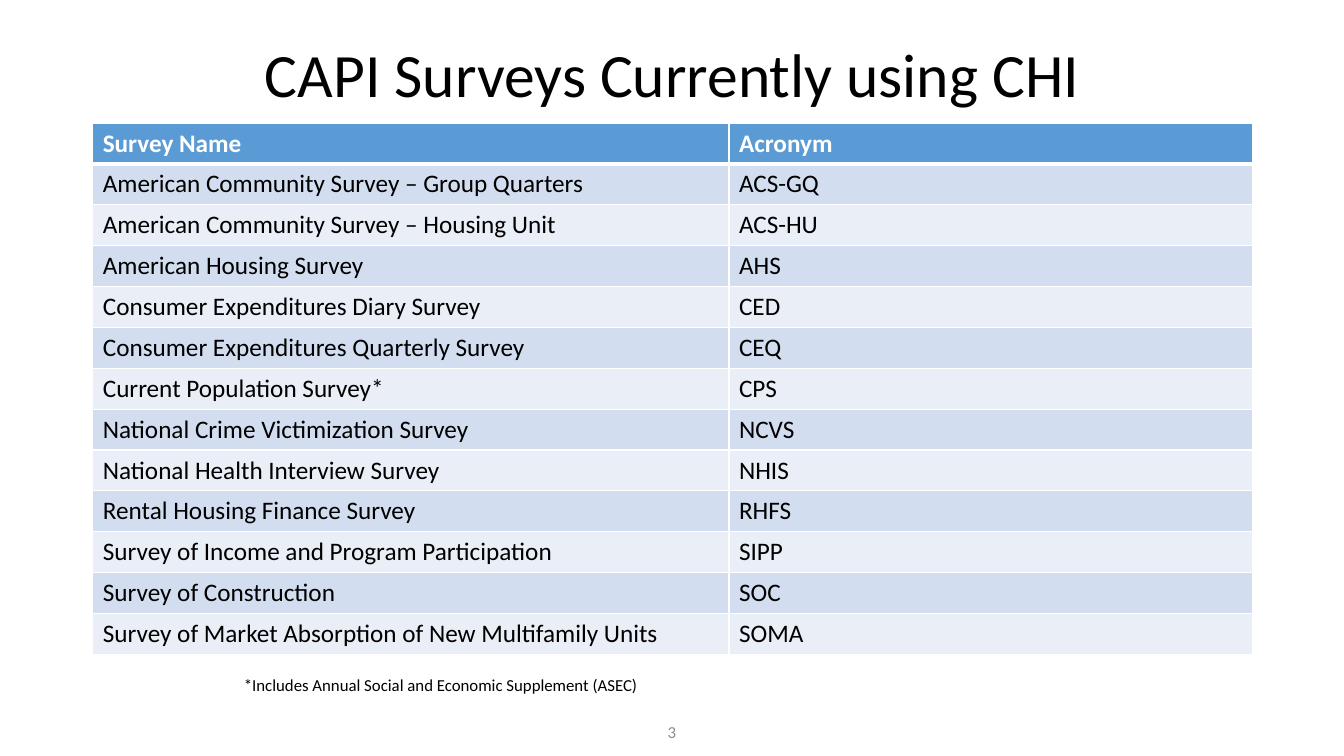
from lxml.etree import SubElement as Sub
from pptx import Presentation
from pptx.dml.color import RGBColor as RGB
from pptx.enum.text import MSO_ANCHOR as Anchor, MSO_AUTO_SIZE as Fit, PP_ALIGN as Align
from pptx.oxml.ns import qn
from pptx.util import Inches, Pt

COLORS = {"head": "5B9BD5", "odd": "D2DEEF", "even": "EAEFF7",
          "white": "FFFFFF", "black": "000000", "gray": "8C8C8C"}
FONT = "Calibri"
WIDE, HIGH = 13.33, 7.5
LEFT, SPAN = 0.92, 11.5
ROW = 0.4055
COLS = (6.31, 5.19)

SURVEYS = [
    ("Survey Name", "Acronym"),
    ("American Community Survey – Group Quarters", "ACS-GQ"),
    ("American Community Survey – Housing Unit", "ACS-HU"),
    ("American Housing Survey", "AHS"),
    ("Consumer Expenditures Diary Survey", "CED"),
    ("Consumer Expenditures Quarterly Survey", "CEQ"),
    ("Current Population Survey*", "CPS"),
    ("National Crime Victimization Survey", "NCVS"),
    ("National Health Interview Survey", "NHIS"),
    ("Rental Housing Finance Survey", "RHFS"),
    ("Survey of Income and Program Participation", "SIPP"),
    ("Survey of Construction", "SOC"),
    ("Survey of Market Absorption of New Multifamily Units", "SOMA"),
]


def style(par, size, color, bold=False, align=Align.LEFT):
    par.alignment = align
    font = par.font
    font.name, font.size, font.bold = FONT, Pt(size), bold
    font.color.rgb = RGB.from_string(COLORS[color])


def add_title(slide, box, text):
    title = slide.shapes.title
    title.left, title.top, title.width, title.height = map(Inches, box)
    frame = title.text_frame
    frame.text = text
    frame.vertical_anchor = Anchor.MIDDLE
    par = frame.paragraphs[0]
    style(par, 44, "black", align=Align.CENTER)
    par.line_spacing = 0.9


def add_edges(cell, top, bottom):
    """Draw white borders; must run before the cell is filled."""
    props = cell._tc.get_or_add_tcPr()
    for side, width in (("L", 1), ("R", 1), ("T", top), ("B", bottom)):
        line = Sub(props, qn(f"a:ln{side}"), w=str(Pt(width)))
        fill = Sub(line, qn("a:solidFill"))
        Sub(fill, qn("a:srgbClr"), val=COLORS["white"])


def add_grid(slide, box, rows):
    grid = slide.shapes.add_table(len(rows), len(COLS), *map(Inches, box)).table
    for col, width in zip(grid.columns, COLS):
        col.width = Inches(width)
    for r, row in enumerate(rows):
        grid.rows[r].height = Inches(ROW)
        head = r == 0
        shade = "head" if head else "odd" if r % 2 else "even"
        for c, text in enumerate(row):
            cell = grid.cell(r, c)
            cell.text = text
            add_edges(cell, 3 if r == 1 else 1, 3 if head else 1)
            cell.fill.solid()
            cell.fill.fore_color.rgb = RGB.from_string(COLORS[shade])
            style(cell.text_frame.paragraphs[0], 18,
                  "white" if head else "black", head)


def add_label(slide, box, text, color, align=Align.LEFT, anchor=Anchor.TOP):
    frame = slide.shapes.add_textbox(*map(Inches, box)).text_frame
    frame.word_wrap = True
    frame.auto_size = Fit.NONE
    frame.vertical_anchor = anchor
    frame.text = text
    style(frame.paragraphs[0], 12, color, align=align)


def main():
    deck = Presentation()
    deck.slide_width, deck.slide_height = Inches(WIDE), Inches(HIGH)
    slide = deck.slides.add_slide(deck.slide_layouts[5])
    add_title(slide, (LEFT, 0.04, SPAN, 1.45), "CAPI Surveys Currently using CHI")
    add_grid(slide, (LEFT, 1.22, SPAN, ROW * len(SURVEYS)), SURVEYS)
    add_label(slide, ((WIDE - 3) / 2, 7.06, 3, 0.4), "3", "gray",
              Align.CENTER, Anchor.MIDDLE)
    add_label(slide, (2.32, 6.64, 4.35, 0.3),
              "*Includes Annual Social and Economic Supplement (ASEC)", "black")
    deck.save("out.pptx")


if __name__ == "__main__":
    main()
